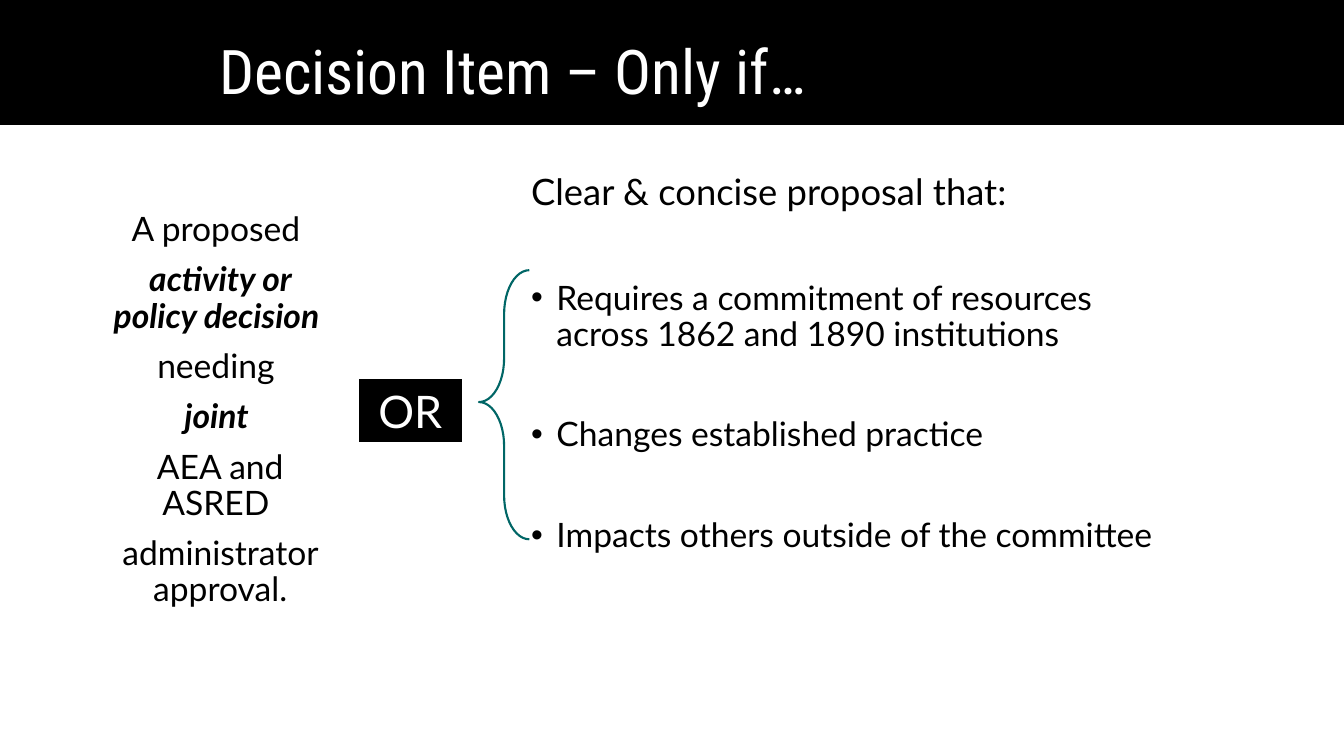
from lxml.etree import SubElement
from pptx import Presentation
from pptx.dml.color import RGBColor
from pptx.enum.shapes import MSO_SHAPE as Shape
from pptx.enum.text import MSO_ANCHOR as Anchor, MSO_AUTO_SIZE as AutoSize, PP_ALIGN as Align
from pptx.oxml.ns import qn
from pptx.util import Cm, Pt

BLACK = RGBColor(0x00, 0x00, 0x00)
WHITE = RGBColor(0xFF, 0xFF, 0xFF)
TEAL = RGBColor(0x00, 0x66, 0x66)


def place(box, left, top, width, height):
    box.left, box.top, box.width, box.height = Cm(left), Cm(top), Cm(width), Cm(height)
    box.text_frame.word_wrap = True
    box.text_frame.auto_size = AutoSize.NONE


def style(para, size, color, font="Lato", emphasis=False):
    for span in para.runs:
        span.font.name = font
        span.font.size = Pt(size)
        span.font.color.rgb = color
        span.font.bold = span.font.italic = emphasis


deck = Presentation()
deck.slide_width, deck.slide_height = Cm(33.87), Cm(19.05)
page = deck.slides.add_slide(deck.slide_layouts[3])
title, criteria, proposal = page.placeholders

band = page.shapes.add_shape(Shape.RECTANGLE, 0, 0, deck.slide_width, Cm(3.15))
band.shadow.inherit = False
band.fill.solid()
band.fill.fore_color.rgb = BLACK
band.line.fill.background()
title.element.addprevious(band.element)

place(title, 1.98, 0.03, 21.89, 3.68)
title.text_frame.text = "Decision Item – Only if…"
title.text_frame.vertical_anchor = Anchor.MIDDLE
heading = title.text_frame.paragraphs[0]
heading.alignment = Align.CENTER
heading.line_spacing = 0.9
style(heading, 44, WHITE, "Roboto Condensed")

place(criteria, 13.13, 4.27, 16.51, 10.67)
criteria_lines = [
    ("Clear & concise proposal that:", 26, 0, "buNone"),
    ("Requires a commitment of resources across 1862 and 1890 institutions", 24, 48, "buChar"),
    ("Changes established practice", 24, 46, "buChar"),
    ("Impacts others outside of the committee", 24, 46, "buChar"),
]
criteria.text_frame.text = "\n".join(line[0] for line in criteria_lines)
for para, (text, size, gap, bullet) in zip(criteria.text_frame.paragraphs, criteria_lines):
    para.line_spacing = 0.9
    para.space_before = Pt(gap)
    props = para._p.get_or_add_pPr()
    props.set("marL", str(Cm(0.64)))
    props.set("indent", str(Cm(-0.64)))
    mark = SubElement(props, qn("a:" + bullet))
    if bullet == "buChar":
        mark.set("char", "•")
    style(para, size, BLACK)

place(proposal, 2.49, 5.23, 6.12, 11.43)
proposal_lines = [
    ("A proposed ", False),
    ("activity or policy decision ", True),
    ("needing ", False),
    ("joint ", True),
    ("AEA and ASRED ", False),
    ("administrator approval.", False),
]
proposal.text_frame.text = "\n".join(line[0] for line in proposal_lines)
for row, (para, (text, emphasis)) in enumerate(zip(proposal.text_frame.paragraphs, proposal_lines)):
    para.alignment = Align.CENTER
    para.line_spacing = 0.9
    para.space_before = Pt(10 if row else 0)
    props = para._p.get_or_add_pPr()
    props.set("marL", "0")
    props.set("indent", "0")
    SubElement(props, qn("a:buNone"))
    style(para, 24, BLACK, emphasis=emphasis)

choice = page.shapes.add_shape(Shape.RECTANGLE, Cm(9.02), Cm(9.53), Cm(2.64), Cm(1.63))
choice.shadow.inherit = False
choice.fill.solid()
choice.fill.fore_color.rgb = BLACK
choice.line.color.rgb = WHITE
choice.line.width = Pt(1.5)
choice.text_frame.text = "OR"
choice.text_frame.vertical_anchor = Anchor.MIDDLE
choice.text_frame.paragraphs[0].alignment = Align.CENTER
style(choice.text_frame.paragraphs[0], 32, WHITE)

brace = page.shapes.add_shape(Shape.LEFT_BRACE, Cm(12.07), Cm(6.81), Cm(1.27), Cm(6.78))
brace.shadow.inherit = False
brace.adjustments[0] = 0.87
brace.adjustments[1] = 0.49
brace.fill.background()
brace.line.color.rgb = TEAL
brace.line.width = Pt(1.5)

deck.save("out.pptx")
